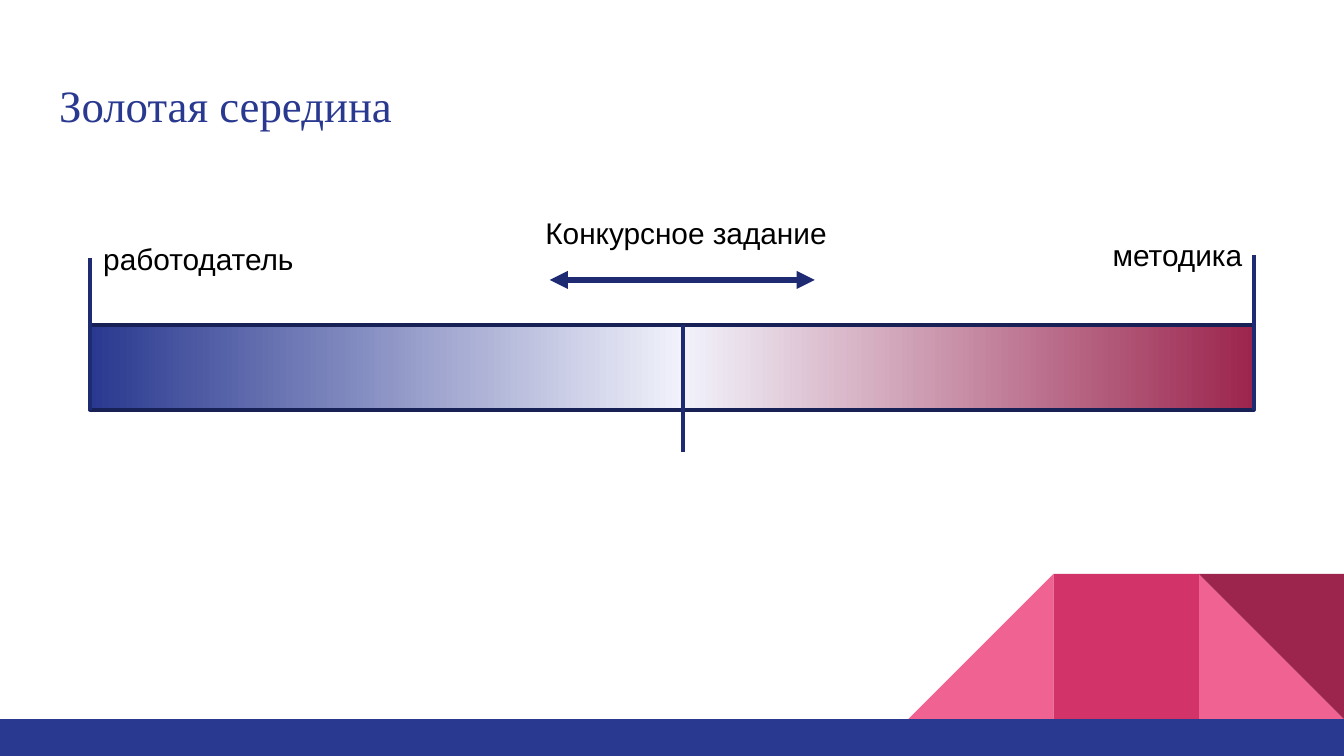
from copy import deepcopy

from lxml.etree import SubElement
from pptx import Presentation
from pptx.dml.color import RGBColor
from pptx.enum.shapes import MSO_CONNECTOR, MSO_SHAPE
from pptx.enum.text import MSO_ANCHOR, MSO_AUTO_SIZE, PP_ALIGN
from pptx.oxml.ns import qn
from pptx.util import Pt

WIDTH, HEIGHT = 720, 405
BLUE, NAVY, DARK_NAVY = "2A3990", "1E2B73", "182156"
PINK, CRIMSON, WINE, PALE = "F06292", "D23369", "9C254D", "F1F2FB"


def color(value):
    return RGBColor.from_string(value)


class SlideBuilder:
    label_font, label_size = "Arial", 16
    title_font, title_size = "Times New Roman", 24

    def __init__(self, slide):
        self.slide = slide

    def style_text(self, paragraph, font, size, fill):
        paragraph.alignment = PP_ALIGN.LEFT
        paragraph.font.name = font
        paragraph.font.size = Pt(size)
        paragraph.font.color.rgb = color(fill)

    def title(self, text, left, top, width, height):
        shape = self.slide.shapes.title
        shape.left, shape.top = Pt(left), Pt(top)
        shape.width, shape.height = Pt(width), Pt(height)
        frame = shape.text_frame
        frame.text = text
        frame.vertical_anchor = MSO_ANCHOR.MIDDLE
        frame.margin_left = frame.margin_right = Pt(7.2)
        frame.margin_top = frame.margin_bottom = Pt(7.2)
        self.style_text(frame.paragraphs[0], self.title_font, self.title_size, BLUE)

    def label(self, text, left, top, width, height=26.64):
        frame = self.slide.shapes.add_textbox(
            Pt(left), Pt(top), Pt(width), Pt(height)).text_frame
        frame.text = text
        frame.word_wrap = False
        frame.auto_size = MSO_AUTO_SIZE.SHAPE_TO_FIT_TEXT
        self.style_text(frame.paragraphs[0], self.label_font, self.label_size, "000000")

    def block(self, kind, left, top, width, height, fill):
        shape = self.slide.shapes.add_shape(
            kind, Pt(left), Pt(top), Pt(width), Pt(height))
        shape.shadow.inherit = False
        shape.fill.solid()
        shape.fill.fore_color.rgb = color(fill)
        shape.line.fill.background()
        return shape

    def gradient_bar(self, left, top, width, height, stops):
        shape = self.block(MSO_SHAPE.RECTANGLE, left, top, width, height, PALE)
        shape.fill.gradient()
        shape.fill.gradient_angle = 0
        # The default gradient has two stops; add one for the middle
        stop_list = shape._element.spPr.find(qn("a:gradFill")).find(qn("a:gsLst"))
        stop_list.insert(1, deepcopy(stop_list[0]))
        for stop, (position, fill) in zip(shape.fill.gradient_stops, stops):
            stop.position = position
            stop.color.rgb = color(fill)
        shape.line.color.rgb = color(DARK_NAVY)
        shape.line.width = Pt(2)

    def line(self, x1, y1, x2, y2, weight=2, arrows=False):
        connector = self.slide.shapes.add_connector(
            MSO_CONNECTOR.STRAIGHT, Pt(x1), Pt(y1), Pt(x2), Pt(y2))
        connector.line.color.rgb = color(NAVY)
        connector.line.width = Pt(weight)
        properties = connector._element.spPr
        if arrows:
            for end in ("a:headEnd", "a:tailEnd"):
                SubElement(properties.find(qn("a:ln")), qn(end), type="triangle")
        SubElement(properties, qn("a:effectLst"))


def main():
    presentation = Presentation()
    presentation.slide_width, presentation.slide_height = Pt(WIDTH), Pt(HEIGHT)
    slide = presentation.slides.add_slide(presentation.slide_layouts[5])
    builder = SlideBuilder(slide)

    # Corner ornament: three equal tiles above the bottom band
    tile, band_top = 77.8, 385.2
    tile_top = band_top - tile
    first, second, third = (WIDTH - count * tile for count in (3, 2, 1))
    triangle = MSO_SHAPE.RIGHT_TRIANGLE
    builder.block(triangle, third, tile_top, tile, tile, PINK)
    # A quarter turn back puts the right angle at the bottom right
    builder.block(triangle, first, tile_top, tile, tile, PINK).rotation = 270
    builder.block(MSO_SHAPE.RECTANGLE, second, tile_top, tile, tile, CRIMSON)
    builder.block(triangle, third, tile_top, tile, tile, WINE).rotation = 180
    builder.block(MSO_SHAPE.RECTANGLE, 0, band_top, WIDTH, HEIGHT - band_top, BLUE)

    builder.title("Золотая середина", 24.5, 32.4, 671, 47.5)

    # Scale with marks at both ends and near the middle
    left, right, top, bottom = 48.24, 671.76, 174.2, 219.6
    builder.gradient_bar(left, top, right - left, bottom - top,
                         [(0, BLUE), (0.51, PALE), (1, WINE)])
    builder.line(left, bottom, left, 138.5)
    builder.line(right, bottom, right, 136.6)
    builder.line(365.7, 242, 365.7, top)

    # Labels and the range arrow
    builder.label("Конкурсное задание", 285.1, 111.6, 167)
    builder.label("работодатель", left, 125.3, 119.5)
    builder.label("методика", 589, 123.5, 85.7)
    builder.line(294.5, 150, 436.5, 150, weight=3.25, arrows=True)

    presentation.save("out.pptx")


if __name__ == "__main__":
    main()
